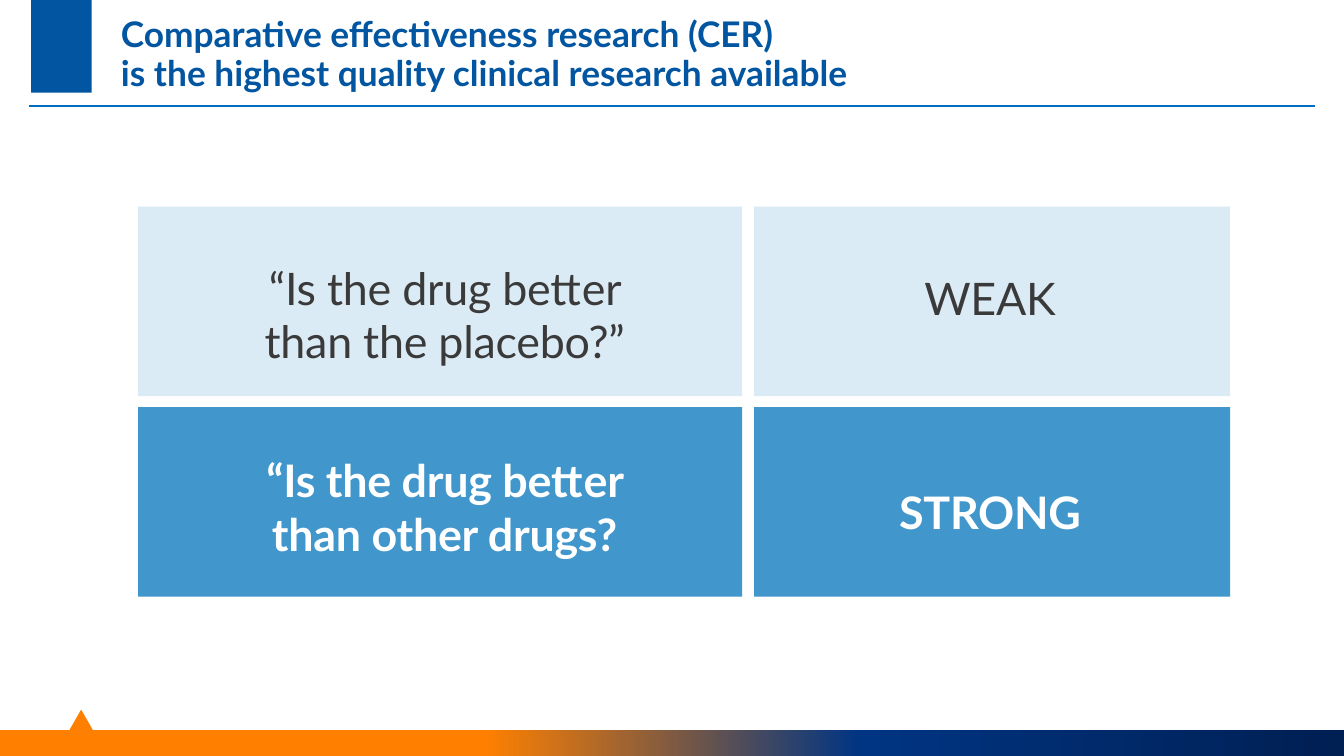
"""Builds a slide contrasting weak and strong clinical research questions."""
from copy import deepcopy

from lxml.etree import SubElement
from pptx import Presentation
from pptx.dml.color import RGBColor as Rgb
from pptx.enum.shapes import MSO_CONNECTOR as Connector, MSO_SHAPE as Shape
from pptx.enum.text import MSO_ANCHOR as Anchor, MSO_AUTO_SIZE as AutoSize, PP_ALIGN as Align
from pptx.oxml.ns import qn
from pptx.util import Inches, Pt

THEME = {
    "title": Rgb.from_string("0255A0"),
    "rule": Rgb.from_string("006FC3"),
    "accent": Rgb.from_string("FF8000"),
    "cell": Rgb.from_string("4196CB"),
    "dark": Rgb.from_string("3A3A3B"),
    "white": Rgb.from_string("FFFFFF"),
    "footer": [(0, "001F53"), (0.36, "003583"), (0.64, "FF8000")],
    "font": "Lato",
    "title_size": Pt(25.2),
    "cell_size": Pt(32),
}
WIDTH, HEIGHT = 13.33, 7.5
FOOTER_TOP = 7.24


def add_block(page, preset, left, top, width, height, color):
    block = page.shapes.add_shape(preset, *map(Inches, (left, top, width, height)))
    block.shadow.inherit = False
    block.line.fill.background()
    block.fill.solid()
    block.fill.fore_color.rgb = color
    return block


def apply_format(target, values):
    for name, value in values.items():
        setattr(target, name, value)


deck = Presentation()
deck.slide_width, deck.slide_height = Inches(WIDTH), Inches(HEIGHT)
page = deck.slides.add_slide(deck.slide_layouts[5])

rule = page.shapes.add_connector(
    Connector.STRAIGHT, *map(Inches, (0.29, 1.05, 13.04, 1.05)))
rule.line.color.rgb = THEME["rule"]
rule.line.width = Pt(1)
SubElement(rule.element.spPr, qn("a:effectLst"))

footer = add_block(page, Shape.RECTANGLE, 0, FOOTER_TOP, WIDTH, HEIGHT - FOOTER_TOP, THEME["accent"])
footer.fill.gradient()
footer.fill.gradient_angle = 180
stop_list = footer.element.spPr.find(qn("a:gradFill")).find(qn("a:gsLst"))
stop_list.append(deepcopy(stop_list[-1]))
for stop, (position, color) in zip(footer.fill.gradient_stops, THEME["footer"]):
    stop.position = position
    stop.color.rgb = Rgb.from_string(color)

add_block(page, Shape.ISOSCELES_TRIANGLE, 0.69, FOOTER_TOP - 0.2, 0.23, 0.2, THEME["accent"])
add_block(page, Shape.RECTANGLE, 0.31, 0, 0.6, 0.92, THEME["title"])

title = page.shapes.title
apply_format(title, {"left": Inches(1.1), "top": Inches(0.38),
                     "width": Inches(12.75), "height": Inches(0.6)})
title.text_frame.text = ("Comparative effectiveness research (CER)\v"
                         "is the highest quality clinical research available")
apply_format(title.text_frame, {"vertical_anchor": Anchor.BOTTOM, "word_wrap": True,
                                "auto_size": AutoSize.NONE})
para = title.text_frame.paragraphs[0]
apply_format(para, {"alignment": Align.LEFT, "line_spacing": 0.9})
for span in para.runs:
    apply_format(span.font, {"name": THEME["font"], "size": THEME["title_size"], "bold": True})
    span.font.color.rgb = THEME["title"]

COLUMNS = [(1.37, 5.99, 2.18), (7.48, 4.72, 7.59)]
ROW_HEIGHT = 1.88
ROWS = [
    (2.05, 19, "dark", False,
     [("“Is the drug better than the placebo?”", 2.5, 1.15), ("WEAK", 2.61, 0.61)]),
    (4.04, 100, "white", True,
     [("“Is the drug better than other drugs?", 4.41, 1.15), ("STRONG", 4.73, 0.61)]),
]

for row_top, opacity, ink, bold, labels in ROWS:
    for (left, width, text_left), (label, text_top, text_height) in zip(COLUMNS, labels):
        cell = add_block(page, Shape.RECTANGLE, left, row_top, width, ROW_HEIGHT, THEME["cell"])
        if opacity < 100:
            fill_color = cell.element.spPr.find(qn("a:solidFill"))[0]
            SubElement(fill_color, qn("a:alpha"), val=str(opacity * 1000))

        box = page.shapes.add_textbox(*map(Inches, (text_left, text_top, 4.37, text_height)))
        apply_format(box.text_frame, {
            "margin_left": 0, "margin_top": Inches(0.07), "margin_right": 0, "margin_bottom": 0,
            "vertical_anchor": Anchor.BOTTOM, "word_wrap": True,
            "auto_size": AutoSize.SHAPE_TO_FIT_TEXT})
        para = box.text_frame.paragraphs[0]
        para.alignment = Align.CENTER
        para._p.get_or_add_pPr().set("marL", str(Inches(0.09)))
        span = para.add_run()
        span.text = label
        apply_format(span.font, {"name": THEME["font"], "size": THEME["cell_size"], "bold": bold})
        span.font.color.rgb = THEME[ink]
        span._r.get_or_add_rPr().set("spc", "-20")

deck.save("out.pptx")
